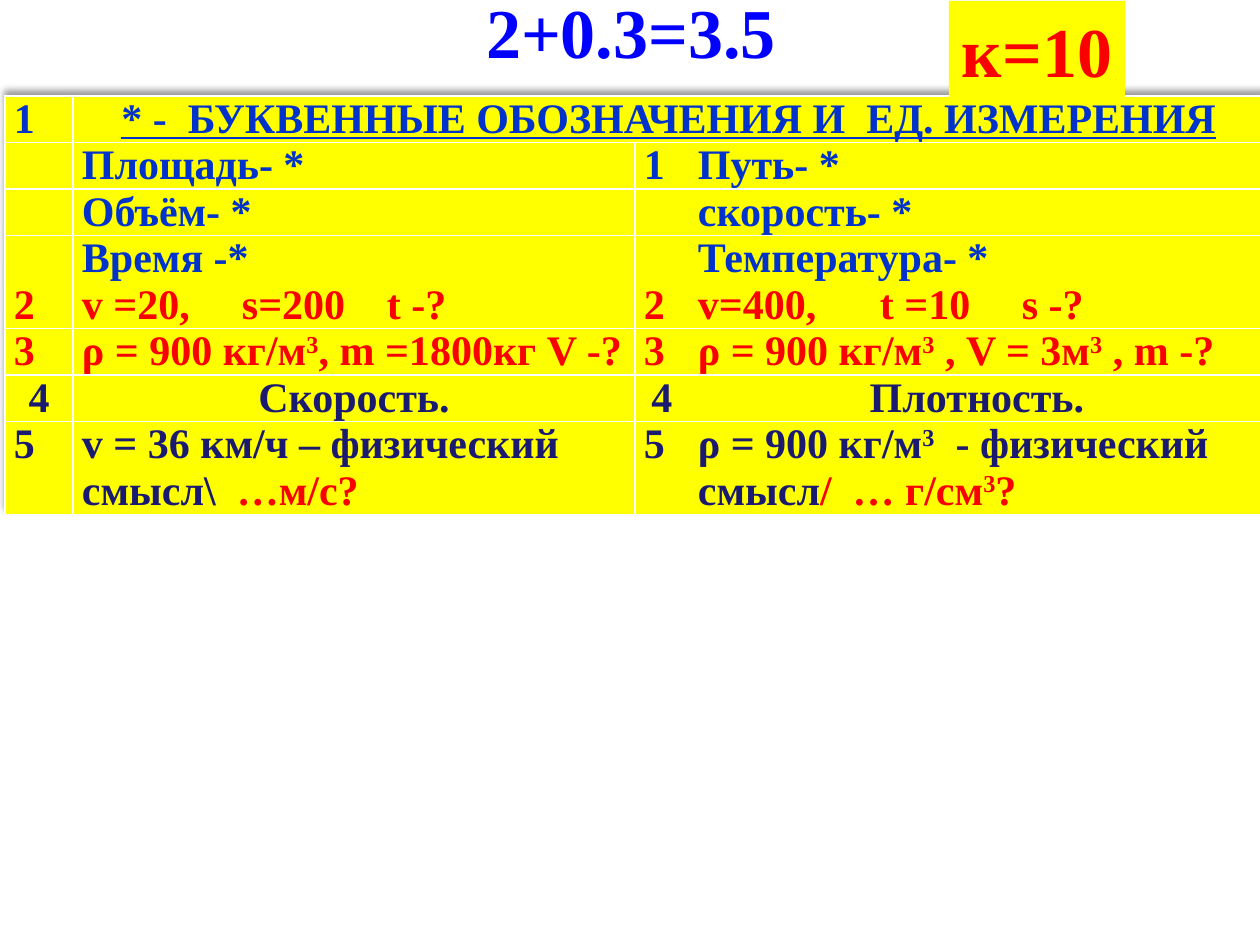
from dataclasses import dataclass

from lxml import etree
from pptx import Presentation
from pptx import util as u
from pptx.dml.color import RGBColor
from pptx.enum import shapes, text
from pptx.oxml import ns

PX_PER_INCH = 126
FONT = "Times New Roman"
YELLOW, WHITE = "FFFF00", "FFFFFF"
BLUE, BRIGHT_BLUE, RED, NAVY = "0033CC", "0000FF", "F90101", "1A1A70"
COLUMNS = [68, 562, 54, 576]
ROW_HEIGHT = 46


@dataclass(frozen=True)
class Run:
    words: str
    color: str
    raised: bool = False
    underline: bool = False


@dataclass(frozen=True)
class Entry:
    runs: tuple[Run, ...] = ()
    centered: bool = False
    tabs: tuple[int, ...] = ()


@dataclass(frozen=True)
class Label:
    words: str
    color: str
    box: tuple[int, int, int, int]
    fill: str | None = None


def px(length: int) -> u.Emu:
    return u.Emu(round(length * u.Inches(1) / PX_PER_INCH))


def rgb(color: str) -> RGBColor:
    return RGBColor.from_string(color)


def plain(words: str, color: str, centered: bool = False, tabs: tuple[int, ...] = ()) -> Entry:
    return Entry((Run(words, color),), centered, tabs)


def raised(color: str) -> Run:
    return Run("3", color, raised=True)


EMPTY = Entry()
DENSITY = (Run("ρ = 900 кг/м", RED), raised(RED))
QUESTIONS = [
    [plain("1", BLUE),
     Entry((Run("* -  БУКВЕННЫЕ ОБОЗНАЧЕНИЯ И  ЕД. ИЗМЕРЕНИЯ", BLUE, underline=True),), True),
     EMPTY, EMPTY],
    [EMPTY, plain("Площадь- *", BLUE), plain("1", BLUE), plain("Путь- *", BLUE)],
    [EMPTY, plain("Объём- *", BLUE), EMPTY, plain("скорость- *", BLUE)],
    [EMPTY, plain("Время -*", BLUE), EMPTY, plain("Температура- *", BLUE)],
    [plain("2", RED), plain("v =20,\ts=200\tt -?", RED, tabs=(160, 305)),
     plain("2", RED), plain("v=400,\tt =10\ts -?", RED, tabs=(182, 324))],
    [plain("3", RED), Entry((*DENSITY, Run(", m =1800кг V -?", RED))),
     plain("3", RED),
     Entry((*DENSITY, Run(" , V = 3м", RED), raised(RED), Run(" , m -?", RED)))],
    [plain("4", NAVY, True), plain("Скорость.", NAVY, True),
     plain("4", NAVY, True), plain("Плотность.", NAVY, True)],
    [plain("5", NAVY),
     Entry((Run("v = 36 км/ч – физический смысл\\  ", NAVY), Run("…м/с?", RED))),
     plain("5", NAVY),
     Entry((Run("ρ = 900 кг/м", NAVY), raised(NAVY), Run("  - физический смысл", NAVY),
            Run("/  … г/см", RED), raised(RED), Run("?", RED)))],
]
LABELS = [
    Label("2+0.3=3.5", BRIGHT_BLUE, (472, -18, 318, 97)),
    Label("к=10", RED, (949, 1, 176, 97), YELLOW),
]


def add_run(paragraph, run: Run, size: int) -> None:
    piece = paragraph.add_run()
    piece.text = run.words
    font = piece.font
    font.name, font.size, font.bold = FONT, u.Pt(size), True
    font.underline = run.underline
    font.color.rgb = rgb(run.color)
    if run.raised:
        font._element.set("baseline", "30000")


def set_tabs(paragraph, stops: tuple[int, ...]) -> None:
    tab_list = etree.SubElement(paragraph._p.get_or_add_pPr(), ns.qn("a:tabLst"))
    for stop in stops:
        etree.SubElement(tab_list, ns.qn("a:tab"), pos=str(px(stop)), algn="l")


def set_borders(cell, hidden: set[str]) -> None:
    properties = cell._tc.get_or_add_tcPr()
    for index, side in enumerate(("lnL", "lnR", "lnT", "lnB")):
        line = etree.Element(ns.qn(f"a:{side}"), w=str(u.Pt(1)))
        properties.insert(index, line)
        if side in hidden:
            etree.SubElement(line, ns.qn("a:noFill"))
        else:
            fill = etree.SubElement(line, ns.qn("a:solidFill"))
            etree.SubElement(fill, ns.qn("a:srgbClr"), val=WHITE)


def fill_cell(cell, entry: Entry, hidden: set[str]) -> None:
    cell.margin_left = cell.margin_right = px(9)
    cell.margin_top = cell.margin_bottom = 0
    cell.fill.solid()
    cell.fill.fore_color.rgb = rgb(YELLOW)
    set_borders(cell, hidden)
    paragraph = cell.text_frame.paragraphs[0]
    if entry.centered:
        paragraph.alignment = text.PP_ALIGN.CENTER
    if entry.tabs:
        set_tabs(paragraph, entry.tabs)
    for run in entry.runs:
        add_run(paragraph, run, 24)


def add_table_shadow(table) -> None:
    effects = etree.Element(ns.qn("a:effectLst"))
    shadow = etree.SubElement(effects, ns.qn("a:outerShdw"), blurRad="50800",
                              dist="38100", dir="16200000", algn="b", rotWithShape="0")
    color = etree.SubElement(shadow, ns.qn("a:srgbClr"), val="000000")
    etree.SubElement(color, ns.qn("a:alpha"), val="40000")
    table._tbl.tblPr.insert(0, effects)


def add_questions(slide) -> None:
    table = slide.shapes.add_table(
        len(QUESTIONS), len(COLUMNS), px(5), px(96),
        px(sum(COLUMNS)), px(ROW_HEIGHT * (len(QUESTIONS) + 1))).table
    table.horz_banding = False
    add_table_shadow(table)
    for column, width in zip(table.columns, COLUMNS):
        column.width = px(width)
    last = len(QUESTIONS) - 1
    hidden_by_row = {3: {"lnB"}, 4: {"lnT"}}
    hidden_by_column = {2: {"lnR"}, 3: {"lnL"}}
    for r, entries in enumerate(QUESTIONS):
        table.rows[r].height = px(ROW_HEIGHT * (2 if r == last else 1))
        for c, entry in enumerate(entries):
            hidden = hidden_by_row.get(r, set()) | hidden_by_column.get(c, set())
            fill_cell(table.cell(r, c), entry, hidden)
    table.cell(0, 1).merge(table.cell(0, 3))


def add_label(slide, label: Label) -> None:
    box = [px(length) for length in label.box]
    if label.fill:
        holder = slide.shapes.add_shape(shapes.MSO_SHAPE.RECTANGLE, *box)
        holder.shadow.inherit = False
        holder.fill.solid()
        holder.fill.fore_color.rgb = rgb(label.fill)
        holder.line.fill.background()
    else:
        holder = slide.shapes.add_textbox(*box)
    frame = holder.text_frame
    frame.word_wrap = False
    frame.auto_size = text.MSO_AUTO_SIZE.SHAPE_TO_FIT_TEXT
    frame.vertical_anchor = text.MSO_ANCHOR.MIDDLE
    paragraph = frame.paragraphs[0]
    paragraph.alignment = text.PP_ALIGN.CENTER
    add_run(paragraph, Run(label.words, label.color), 40)


def main() -> None:
    deck = Presentation()
    deck.slide_width, deck.slide_height = u.Inches(10), u.Inches(7.5)
    slide = deck.slides.add_slide(deck.slide_layouts[6])
    add_questions(slide)
    for label in LABELS:
        add_label(slide, label)
    deck.save("out.pptx")


if __name__ == "__main__":
    main()
